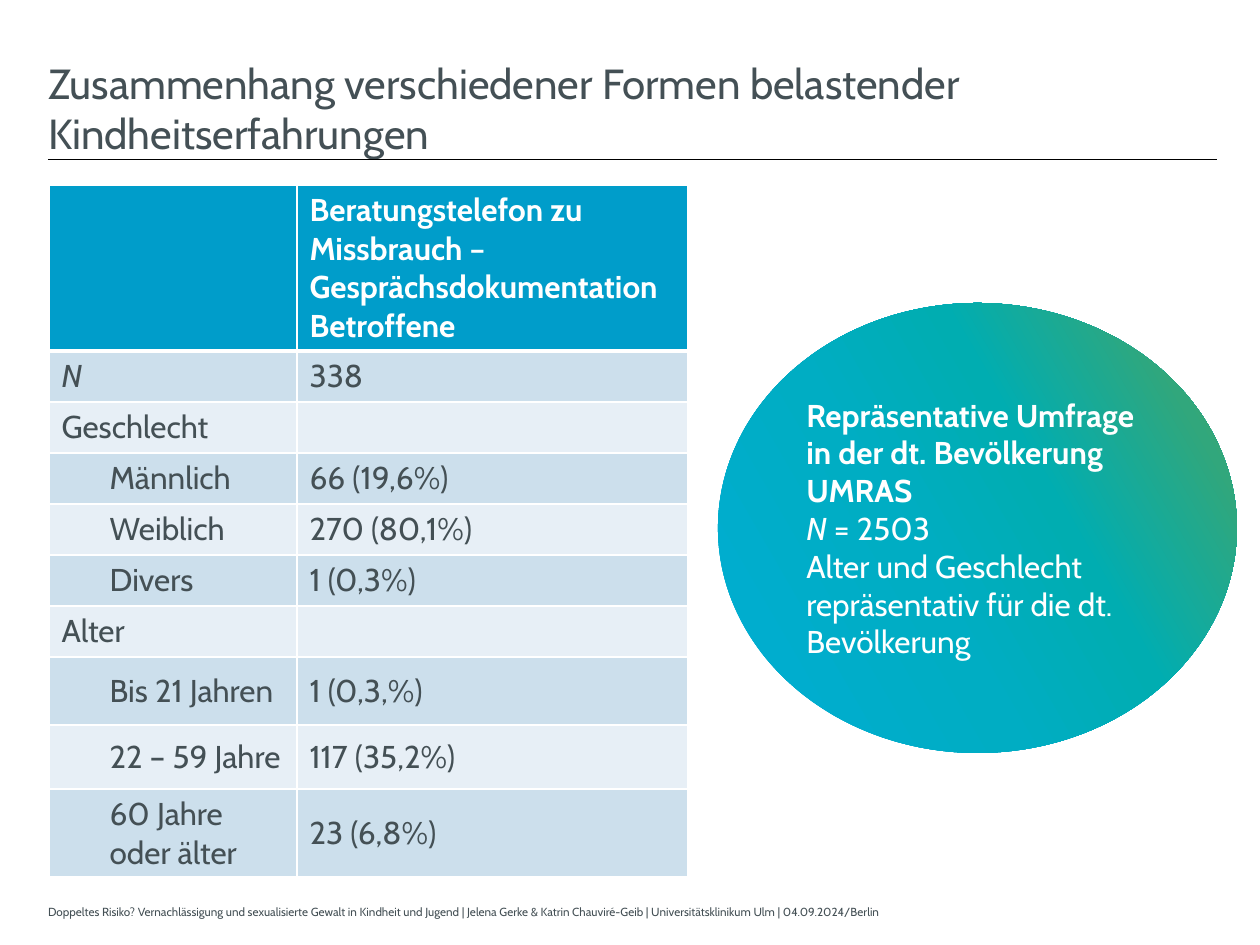
from lxml.etree import Element, SubElement
from pptx import Presentation
from pptx.dml.color import RGBColor
from pptx.enum.shapes import MSO_CONNECTOR, MSO_SHAPE
from pptx.enum.text import MSO_ANCHOR, MSO_AUTO_SIZE, PP_ALIGN
from pptx.oxml.ns import qn
from pptx.util import Pt

SCALE = 914400 / 126
FONT = "Cabin"
DARK, WHITE = "445055", "FFFFFF"
HEAD, BANDS = "009DCA", ("CCDFEC", "E7EFF6")
STOPS = [(0, "00ADD4"), (39, "00ADC3"), (62, "00ADB1"),
         (86, "31A77C"), (100, "61A047")]

COLS = [248, 391]
ROWS = [166] + [51] * 6 + [68, 64, 88]
INDENT = 48
# Label, value, indent level
DATA = [
    ("", "Beratungstelefon zu Missbrauch – "
         "Gesprächsdokumentation Betroffene", 0),
    ("N", "338", 0),
    ("Geschlecht", "", 0),
    ("Männlich", "66 (19,6%)", 1),
    ("Weiblich", "270 (80,1%)", 1),
    ("Divers", "1 (0,3%)", 1),
    ("Alter", "", 0),
    ("Bis 21 Jahren", "1 (0,3,%)", 1),
    ("22 – 59 Jahre", "117 (35,2%)", 1),
    ("60 Jahre oder älter", "23 (6,8%)", 1),
]
FACTS = [
    [("Repräsentative Umfrage in der dt. Bevölkerung", True, False)],
    [("UMRAS", True, False)],
    [("N", False, True), (" = 2503", False, False)],
    [("Alter und Geschlecht repräsentativ für die dt. Bevölkerung",
      False, False)],
]


def px(*vals):
    out = [round(v * SCALE) for v in vals]
    return out if len(out) > 1 else out[0]


def rgb(code):
    return RGBColor.from_string(code)


def style(run, size, color, bold=False, italic=False):
    font = run.font
    font.name, font.size = FONT, Pt(size)
    font.bold, font.italic = bold, italic
    font.color.rgb = rgb(color)


def inset(frame, left, top, right, bottom):
    frame.margin_left, frame.margin_top = px(left, top)
    frame.margin_right, frame.margin_bottom = px(right, bottom)
    frame.word_wrap = True


def place(shape, x, y, w, h):
    shape.left, shape.top, shape.width, shape.height = px(x, y, w, h)


def add_title(slide, x, y, w, h):
    title = slide.shapes.title
    place(title, x, y, w, h)
    frame = title.text_frame
    frame.text = ("Zusammenhang verschiedener Formen belastender "
                  "Kindheitserfahrungen")
    frame.auto_size = MSO_AUTO_SIZE.NONE
    frame.vertical_anchor = MSO_ANCHOR.TOP
    inset(frame, 0, 8, 0, 5)
    para = frame.paragraphs[0]
    para.alignment = PP_ALIGN.LEFT
    style(para.runs[0], 24, DARK)


def add_rule(slide, x, y, w):
    rule = slide.shapes.add_connector(
        MSO_CONNECTOR.STRAIGHT, *px(x, y, x + w, y))
    rule.line.color.rgb = rgb("000000")
    rule.line.width = Pt(0.5)
    SubElement(rule._element.spPr, qn("a:effectLst"))


def edge(cell, top, bottom):
    # Border lines stand before the fill
    widths = {"L": 1, "R": 1, "T": top, "B": bottom}
    props = cell._tc.get_or_add_tcPr()
    for i, (side, width) in enumerate(widths.items()):
        line = Element(qn(f"a:ln{side}"), w=str(Pt(width)))
        fill = SubElement(line, qn("a:solidFill"))
        SubElement(fill, qn("a:srgbClr"), val=WHITE)
        props.insert(i, line)


def add_grid(slide, x, y):
    table = slide.shapes.add_table(
        len(ROWS), len(COLS), *px(x, y, sum(COLS), sum(ROWS))).table
    for col, width in zip(table.columns, COLS):
        col.width = px(width)
    for r, (height, (label, value, level)) in enumerate(zip(ROWS, DATA)):
        table.rows[r].height = px(height)
        for c, text in enumerate((label, value)):
            cell = table.cell(r, c)
            cell.fill.solid()
            cell.fill.fore_color.rgb = rgb(BANDS[(r - 1) % 2] if r else HEAD)
            cell.vertical_anchor = MSO_ANCHOR.MIDDLE
            edge(cell, 3 if r == 1 else 1, 1 if r else 3)
            para = cell.text_frame.paragraphs[0]
            para.text = text
            if c == 0 and level:
                para.level = level
                para._p.get_or_add_pPr().set("marL", str(px(INDENT)))
            for run in para.runs:
                style(run, 18, DARK if r else WHITE, r == 0, text == "N")


def add_oval(slide, x, y, w, h):
    oval = slide.shapes.add_shape(MSO_SHAPE.OVAL, *px(x, y, w, h))
    oval.shadow.inherit = False
    oval.line.fill.background()
    # Gradient with five stops
    oval.fill.gradient()
    oval.fill.gradient_angle = 30
    stops = oval._element.spPr.find(qn("a:gradFill")).find(qn("a:gsLst"))
    for old in list(stops):
        stops.remove(old)
    for pos, color in STOPS:
        stop = SubElement(stops, qn("a:gs"), pos=str(pos * 1000))
        SubElement(stop, qn("a:srgbClr"), val=color)
    # Survey facts
    frame = oval.text_frame
    frame.word_wrap = True
    frame.vertical_anchor = MSO_ANCHOR.MIDDLE
    for i, parts in enumerate(FACTS):
        para = frame.add_paragraph() if i else frame.paragraphs[0]
        para.alignment = PP_ALIGN.LEFT
        for text, bold, italic in parts:
            run = para.add_run()
            run.text = text
            style(run, 18, WHITE, bold, italic)


def add_foot(slide, x, y, w, h):
    frame = slide.shapes.add_textbox(*px(x, y, w, h)).text_frame
    frame.text = ("Doppeltes Risiko? Vernachlässigung und sexualisierte "
                  "Gewalt in Kindheit und Jugend | Jelena Gerke & Katrin "
                  "Chauviré-Geib | Universitätsklinikum Ulm | "
                  "04.09.2024/Berlin")
    frame.vertical_anchor = MSO_ANCHOR.MIDDLE
    inset(frame, 0, 6, 13, 6)
    style(frame.paragraphs[0].runs[0], 6.7, DARK)


def main():
    prs = Presentation()
    prs.slide_width, prs.slide_height = px(1260, 945)
    slide = prs.slides.add_slide(prs.slide_layouts[5])
    add_rule(slide, 48, 159, 1169)
    add_foot(slide, 48, 896, 874, 32)
    add_title(slide, 48, 49, 929, 111)
    add_grid(slide, 49, 185)
    add_oval(slide, 718, 303, 519, 450)
    prs.save("out.pptx")


if __name__ == "__main__":
    main()
